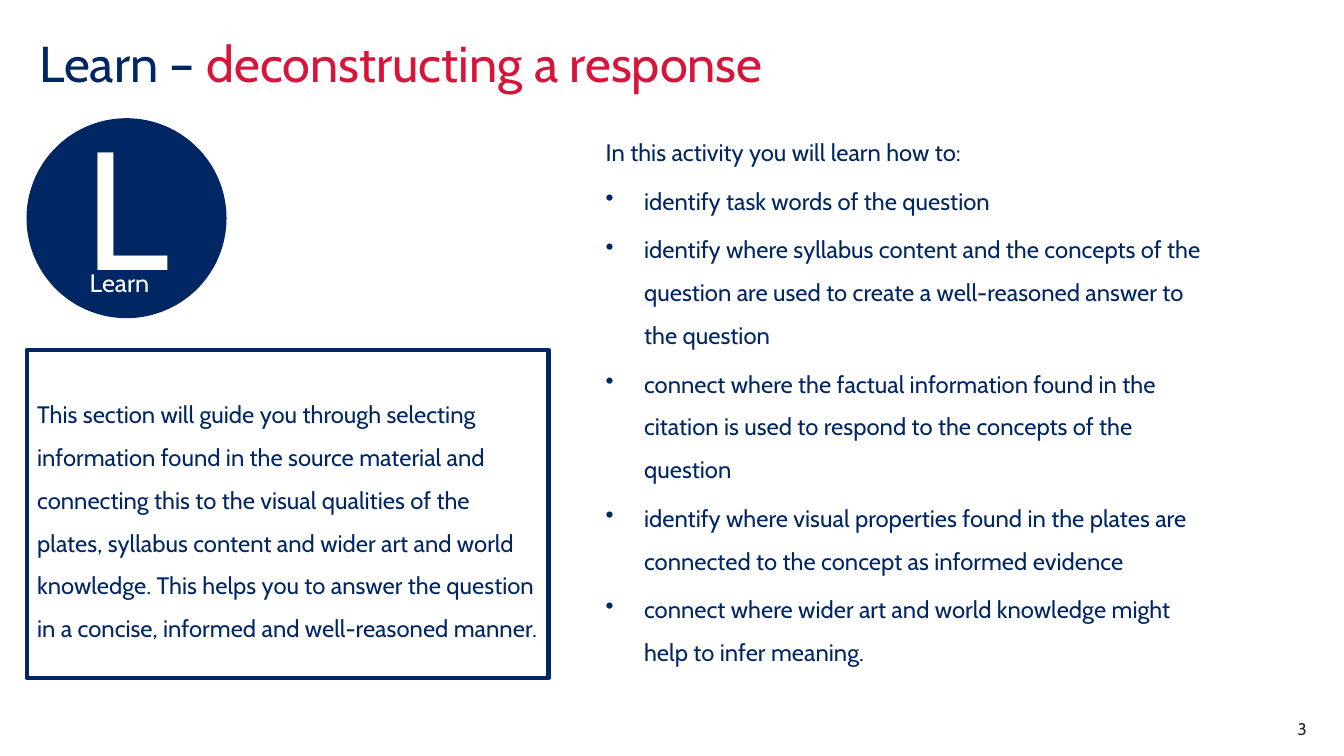
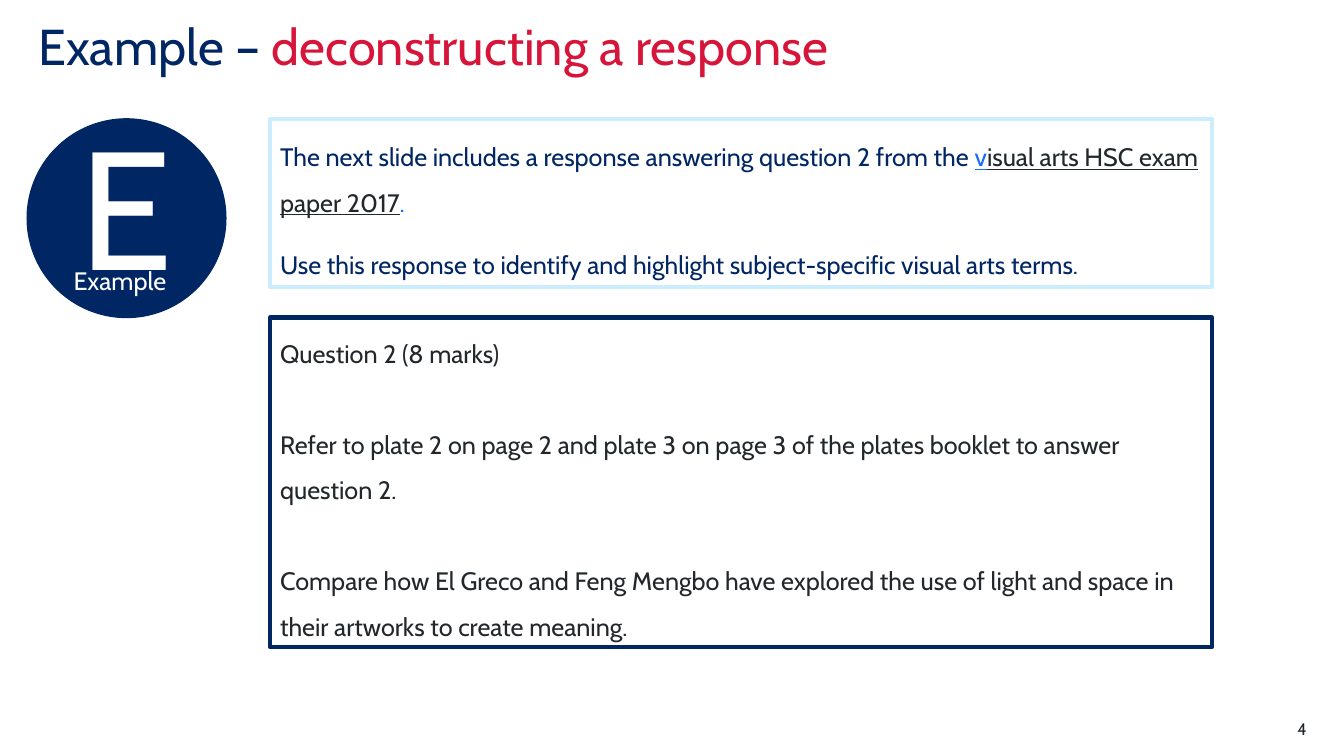
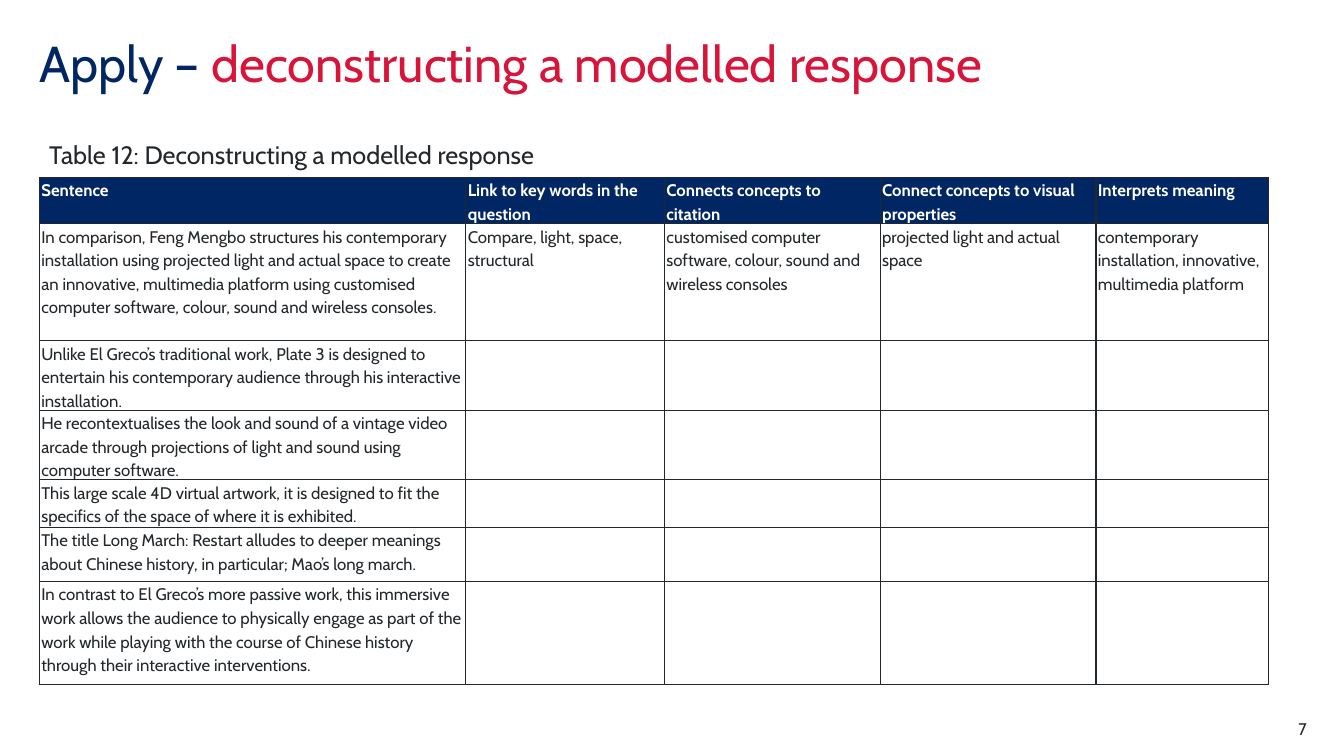
from lxml import etree
from pptx import Presentation
from pptx.dml.color import RGBColor
from pptx.enum import shapes, text
from pptx.oxml.ns import qn
from pptx.util import Inches, Pt

NAVY, RED, SKY, BLUE = "002664", "D7153A", "CBEDFD", "146CFD"
INK, WHITE = "22272B", "FFFFFF"
FONT = "Cabin"
CENTRE, RIGHT = text.PP_ALIGN.CENTER, text.PP_ALIGN.RIGHT

LEARN_GUIDE = (
    "This section will guide you through selecting information found in the source material "
    "and connecting this to the visual qualities of the plates, syllabus content and wider art "
    "and world knowledge. This helps you to answer the question in a concise, informed and "
    "well-reasoned manner."
)
LEARN_INTRO = "In this activity you will learn how to:"
LEARN_GOALS = [
    "identify task words of the question",
    "identify where syllabus content and the concepts of the question are used to create "
    "a well-reasoned answer to the question",
    "connect where the factual information found in the citation is used to respond to "
    "the concepts of the question",
    "identify where visual properties found in the plates are connected to the concept "
    "as informed evidence",
    "connect where wider art and world knowledge might help to infer meaning.",
]

# A run is (text, colour, underlined)
EXAMPLE_INTRO = [
    [
        ("The next slide includes a response answering question 2 from the ", NAVY, False),
        ("v", BLUE, True),
        ("isual arts HSC exam paper 2017", INK, True),
        (".", BLUE, False),
    ],
    "Use this response to identify and highlight subject-specific visual arts terms.",
]
EXAMPLE_QUESTION = [
    "Question 2 (8 marks)",
    "Refer to plate 2 on page 2 and plate 3 on page 3 of the plates booklet to answer question 2.",
    "Compare how El Greco and Feng Mengbo have explored the use of light and space in their "
    "artworks to create meaning.",
]

TABLE_CAPTION = "Table 12: Deconstructing a modelled response"
TABLE_ROWS = [
    ["Sentence", "Link to key words in the question", "Connects concepts to citation",
     "Connect concepts to visual properties", "Interprets meaning"],
    ["In comparison, Feng Mengbo structures his contemporary installation using projected light "
     "and actual space to create an innovative, multimedia platform using customised computer "
     "software, colour, sound and wireless consoles.",
     "Compare, light, space, structural",
     "customised computer software, colour, sound and wireless consoles",
     "projected light and actual space",
     "contemporary installation, innovative, multimedia platform"],
    ["Unlike El Greco’s traditional work, Plate 3 is designed to entertain his contemporary "
     "audience through his interactive installation."],
    ["He recontextualises the look and sound of a vintage video arcade through projections of "
     "light and sound using computer software."],
    ["This large scale 4D virtual artwork, it is designed to fit the specifics of the space of "
     "where it is exhibited."],
    ["The title Long March: Restart alludes to deeper meanings about Chinese history, in "
     "particular; Mao’s long march."],
    ["In contrast to El Greco’s more passive work, this immersive work allows the audience to "
     "physically engage as part of the work while playing with the course of Chinese history "
     "through their interactive interventions."],
]
COLUMN_WIDTHS = [4.23, 1.97, 2.14, 2.14, 1.71]
ROW_HEIGHTS = [0.45, 1.16, 0.69, 0.68, 0.47, 0.54, 1.02]


def rgb(colour):
    return RGBColor.from_string(colour)


def add_bullet(paragraph, indent):
    properties = paragraph._p.get_or_add_pPr()
    properties.set("marL", str(Inches(indent)))
    properties.set("indent", str(-Inches(indent)))
    etree.SubElement(properties, qn("a:buChar")).set("char", "•")


def write(frame, paragraphs, size=18, colour=NAVY, bold=False, align=None,
          spacing=None, gap=0, bulleted_from=None):
    """Fill a text frame; each paragraph is a string or a list of runs."""
    frame.word_wrap = True
    for index, content in enumerate(paragraphs):
        paragraph = frame.add_paragraph() if index else frame.paragraphs[0]
        if bulleted_from is not None and index >= bulleted_from:
            add_bullet(paragraph, 0.38)
        paragraph.alignment = align or text.PP_ALIGN.LEFT
        if spacing:
            paragraph.line_spacing = spacing
        if index and gap:
            paragraph.space_before = Pt(gap)
        runs = [(content, colour, False)] if isinstance(content, str) else content
        for words, run_colour, underlined in runs:
            run = paragraph.add_run()
            run.text = words
            run.font.name, run.font.size, run.font.bold = FONT, Pt(size), bold
            run.font.color.rgb = rgb(run_colour)
            if underlined:
                run.font.underline = True


def add_label(slide, place, paragraphs, inset=False, **style):
    frame = slide.shapes.add_textbox(*map(Inches, place)).text_frame
    if not inset:
        frame.margin_left = frame.margin_right = frame.margin_top = frame.margin_bottom = 0
    write(frame, paragraphs, **style)


def add_panel(slide, kind, place, fill, line, weight):
    panel = slide.shapes.add_shape(kind, *map(Inches, place))
    panel.shadow.inherit = False
    panel.fill.solid()
    panel.fill.fore_color.rgb = rgb(fill)
    panel.line.color.rgb = rgb(line)
    panel.line.width = Pt(weight)
    return panel


def add_framed_text(slide, place, paragraphs, line=NAVY, **style):
    panel = add_panel(slide, shapes.MSO_SHAPE.RECTANGLE, place, WHITE, line, 3)
    panel.text_frame.vertical_anchor = text.MSO_ANCHOR.MIDDLE
    write(panel.text_frame, paragraphs, spacing=1.5, **style)


def add_badge(slide, stage, stage_left, stage_top):
    """Draw the round badge with the initial and the name of the stage."""
    add_panel(slide, shapes.MSO_SHAPE.OVAL, (0.27, 1.18, 1.97, 1.97), NAVY, NAVY, 1)
    add_label(slide, (0.27, 1.02, 1.97, 2.03), [stage[0]], size=120, colour=WHITE, align=CENTRE)
    add_label(slide, (stage_left, stage_top, 1.3, 0.48), [stage], colour=WHITE)


def start_slide(deck, stage, topic, number, title_at=(0.39, 0.39)):
    slide = deck.slides.add_slide(deck.slide_layouts[6])
    title = [(f"{stage} – ", NAVY, False), (topic, RED, False)]
    add_label(slide, (*title_at, 11.02, 1.1), [title], size=36, spacing=0.9)
    add_label(slide, (12.17, 7.13, 0.79, 0.2), [str(number)], size=12, colour=INK, align=RIGHT)
    return slide


def set_borders(cell, colour, weight):
    properties = cell._tc.get_or_add_tcPr()
    for position, side in enumerate(("lnL", "lnR", "lnT", "lnB")):
        border = etree.Element(qn(f"a:{side}"), w=str(Pt(weight)))
        fill = etree.SubElement(border, qn("a:solidFill"))
        etree.SubElement(fill, qn("a:srgbClr")).set("val", colour)
        properties.insert(position, border)


def add_response_table(slide, left, top):
    table = slide.shapes.add_table(
        len(TABLE_ROWS), len(COLUMN_WIDTHS), Inches(left), Inches(top),
        Inches(sum(COLUMN_WIDTHS)), Inches(sum(ROW_HEIGHTS))).table
    table.horz_banding = False
    for column, width in zip(table.columns, COLUMN_WIDTHS):
        column.width = Inches(width)
    for row_index, (row, height) in enumerate(zip(table.rows, ROW_HEIGHTS)):
        row.height = Inches(height)
        heading = row_index == 0
        entries = TABLE_ROWS[row_index]
        for column_index, cell in enumerate(row.cells):
            cell.margin_left = cell.margin_right = Inches(0.02)
            cell.margin_top = cell.margin_bottom = 0
            cell.fill.solid()
            cell.fill.fore_color.rgb = rgb(NAVY if heading else WHITE)
            set_borders(cell, INK, 1)
            if column_index < len(entries):
                write(cell.text_frame, [entries[column_index]], size=12, bold=heading,
                      colour=WHITE if heading else INK, spacing=1.15)


def build_learn(deck):
    slide = start_slide(deck, "Learn", "deconstructing a response", 3)
    add_badge(slide, "Learn", 0.89, 2.65)
    add_framed_text(slide, (0.27, 3.47, 5.17, 3.26), [LEARN_GUIDE], size=17)
    add_label(slide, (5.91, 1.18, 6.26, 5.48), [LEARN_INTRO, *LEARN_GOALS], inset=True,
              size=17, spacing=1.5, gap=4, bulleted_from=1)


def build_example(deck):
    slide = start_slide(deck, "Example", "deconstructing a response", 4, title_at=(0.38, 0.22))
    add_badge(slide, "Example", 0.73, 2.63)
    add_framed_text(slide, (2.68, 1.18, 9.34, 1.67), EXAMPLE_INTRO, line=SKY, gap=12)
    add_framed_text(slide, (2.68, 3.15, 9.34, 3.27), EXAMPLE_QUESTION, colour=INK, gap=32.5)


def build_apply(deck):
    slide = start_slide(deck, "Apply", "deconstructing a modelled response", 7)
    add_label(slide, (0.39, 1.47, 8.14, 0.29), [TABLE_CAPTION], inset=True,
              colour=INK, spacing=Pt(12))
    add_response_table(slide, 0.39, 1.76)


def main():
    deck = Presentation()
    deck.slide_width, deck.slide_height = Inches(13.33), Inches(7.5)
    for build in (build_learn, build_example, build_apply):
        build(deck)
    deck.save("out.pptx")


if __name__ == "__main__":
    main()
